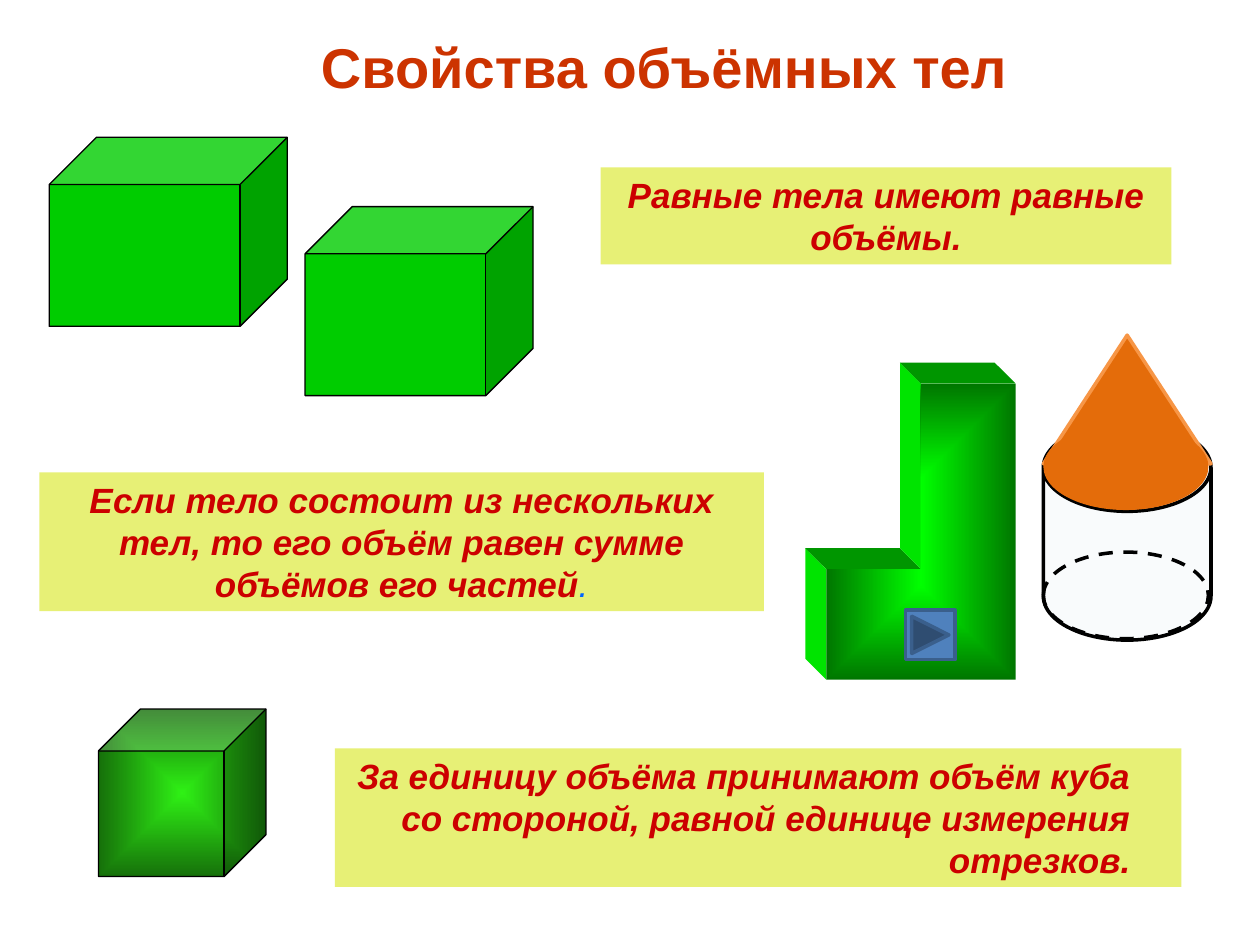
from dataclasses import dataclass

import lxml.etree
import pptx
import pptx.dml.color
import pptx.enum.dml
import pptx.enum.shapes
import pptx.enum.text
import pptx.oxml
import pptx.util

Pt = pptx.util.Pt
SHAPE = pptx.enum.shapes.MSO_SHAPE
ALIGN = pptx.enum.text.PP_ALIGN
NS = "http://schemas.openxmlformats.org/drawingml/2006/main"


@dataclass(frozen=True)
class Theme:
    font: str = "Arial"
    title_size: int = 32
    body_size: int = 20
    title: str = "CC3300"
    body: str = "CC0000"
    stop: str = "0066FF"
    note: str = "E7F076"
    block: str = "00CC00"
    cube: tuple = ("2FF115", "16700A")
    solid: tuple = ("00FF00", "007600")
    solid_side: str = "00E400"
    solid_top: str = "009600"
    cone: str = "E46C0A"
    cone_line: str = "F79646"
    glass: str = "4F81BD"
    button_line: str = "3A5F8C"
    ink: str = "000000"


@dataclass(frozen=True)
class Box:
    left: float
    top: float
    width: float
    height: float

    def lengths(self):
        return [Pt(n) for n in (self.left, self.top, self.width, self.height)]


THEME = Theme()


def rgb(code):
    return pptx.dml.color.RGBColor.from_string(code)


def paint(shape, fill=None, line=None, width=0.75):
    """Set fill and outline; None leaves that part empty."""
    shape.shadow.inherit = False
    if fill:
        shape.fill.solid()
        shape.fill.fore_color.rgb = rgb(fill)
    else:
        shape.fill.background()
    if line:
        shape.line.color.rgb = rgb(line)
        shape.line.width = Pt(width)
    else:
        shape.line.fill.background()


def glow(shape, colors):
    """Give the shape a rectangular gradient from its centre to its edge."""
    shape.fill.gradient()
    gradient = shape.fill._xPr.find(f"{{{NS}}}gradFill")
    stops = "".join(
        f'<a:gs pos="{pos}"><a:srgbClr val="{color}"/></a:gs>'
        for pos, color in zip((0, 100000), colors))
    new = pptx.oxml.parse_xml(
        f'<a:gradFill xmlns:a="{NS}" rotWithShape="1"><a:gsLst>{stops}</a:gsLst>'
        '<a:path path="rect"><a:fillToRect l="50000" t="50000" r="50000" b="50000"/>'
        '</a:path></a:gradFill>')
    gradient.getparent().replace(gradient, new)


def style(para, size, color, italic=False):
    font = para.font
    font.name, font.size, font.bold, font.italic = THEME.font, Pt(size), True, italic
    font.color.rgb = rgb(color)


def add_title(page, box, text):
    title = page.shapes.title
    title.left, title.top, title.width, title.height = box.lengths()
    frame = title.text_frame
    frame.text = text
    frame.auto_size = pptx.enum.text.MSO_AUTO_SIZE.NONE
    frame.vertical_anchor = pptx.enum.text.MSO_ANCHOR.TOP
    para = frame.paragraphs[0]
    para.alignment = ALIGN.CENTER
    style(para, THEME.title_size, THEME.title)


def add_note(page, box, lines, align=ALIGN.CENTER):
    """Yellow statement; returns its paragraphs."""
    note = page.shapes.add_shape(SHAPE.RECTANGLE, *box.lengths())
    paint(note, THEME.note)
    frame = note.text_frame
    frame.word_wrap = True
    frame.vertical_anchor = pptx.enum.text.MSO_ANCHOR.TOP
    frame.text = "\n".join(lines)
    for para in frame.paragraphs:
        para.alignment = align
        style(para, THEME.body_size, THEME.body, italic=True)
    return frame.paragraphs


def add_block(page, box):
    block = page.shapes.add_shape(SHAPE.CUBE, *box.lengths())
    block.adjustments[0] = 0.25
    paint(block, THEME.block, THEME.ink)
    return block


def add_polygon(page, points):
    start, *rest = [(Pt(x), Pt(y)) for x, y in points]
    builder = page.shapes.build_freeform(*start)
    builder.add_line_segments(rest, close=True)
    return builder.convert_to_shape()


def add_corner_solid(page, box, depth=12):
    """L-shaped solid: four extruded faces behind a gradient front."""
    left, top = box.left + depth, box.top + depth
    right, bottom = box.left + box.width, box.top + box.height
    middle, step = (left + right) / 2, top + 106
    front = [(left, bottom), (left, step), (middle, step),
             (middle, top), (right, top), (right, bottom)]
    sides = (THEME.solid_side, THEME.solid_top) * 2
    for start, end, color in zip(front, front[1:], sides):
        back = [(x - depth, y - depth) for x, y in (end, start)]
        paint(add_polygon(page, [start, end, *back]), color)
    face = add_polygon(page, front)
    paint(face)
    glow(face, THEME.solid)


def add_cone_on_cylinder(page, box):
    group = page.shapes.add_group_shape()

    def part(kind, top, height, width=box.width):
        area = Box(box.left, box.top + top, width, height)
        return group.shapes.add_shape(kind, *area.lengths())

    can = part(SHAPE.CAN, 50.5, 123.8)
    can.adjustments[0] = 0.524
    paint(can, THEME.glass, THEME.ink, 2)
    color = can.fill._xPr.find(f"{{{NS}}}solidFill")[0]
    lxml.etree.SubElement(color, f"{{{NS}}}alpha", val="3000")

    rim = box.width - 1.5
    base = part(SHAPE.OVAL, 124, 49.5, rim)
    paint(base, None, THEME.ink, 2)
    base.line.dash_style = pptx.enum.dml.MSO_LINE.DASH
    paint(part(SHAPE.ISOSCELES_TRIANGLE, 0, 73.5), THEME.cone, THEME.cone_line, 2)
    paint(part(SHAPE.OVAL, 50.5, 49.5, rim), THEME.cone)


def add_next_button(page, box):
    button = page.shapes.add_shape(SHAPE.ACTION_BUTTON_FORWARD_OR_NEXT, *box.lengths())
    paint(button, THEME.glass, THEME.button_line, 2)


def main():
    deck = pptx.Presentation()
    deck.slide_width, deck.slide_height = Pt(720), Pt(540)
    page = deck.slides.add_slide(deck.slide_layouts[5])
    add_title(page, Box(70.6, 15.1, 617.8, 45.4), "Свойства объёмных тел")

    # Equal solids
    add_block(page, Box(174.3, 118.1, 130.3, 108))
    add_block(page, Box(28.1, 78.5, 136.1, 108))
    add_note(page, Box(343.2, 95.7, 326.2, 55.4), ["Равные тела имеют равные объёмы."])

    # Unit cube
    unit = add_block(page, Box(56.3, 405.2, 95.7, 95.7))
    glow(unit, THEME.cube)
    first, _ = add_note(
        page, Box(191.3, 427.7, 483.8, 79.2),
        ["За единицу объёма принимают объём куба",
         "со стороной, равной единице измерения отрезков."], ALIGN.RIGHT)
    first._p.get_or_add_pPr().set("marR", str(Pt(22)))

    # Composite solids
    add_corner_solid(page, Box(460.2, 207.2, 120.2, 181.2))
    para, = add_note(
        page, Box(22.5, 270, 414, 79.2),
        ["Если тело состоит из нескольких тел, то его объём равен сумме объёмов его частей"])
    span = para.add_run()
    span.text = "."
    span.font.bold = False
    span.font.color.rgb = rgb(THEME.stop)
    add_cone_on_cylinder(page, Box(596.2, 191.5, 95.8, 174.3))

    add_next_button(page, Box(517.5, 348.7, 28.3, 28.3))
    deck.save("out.pptx")


if __name__ == "__main__":
    main()
